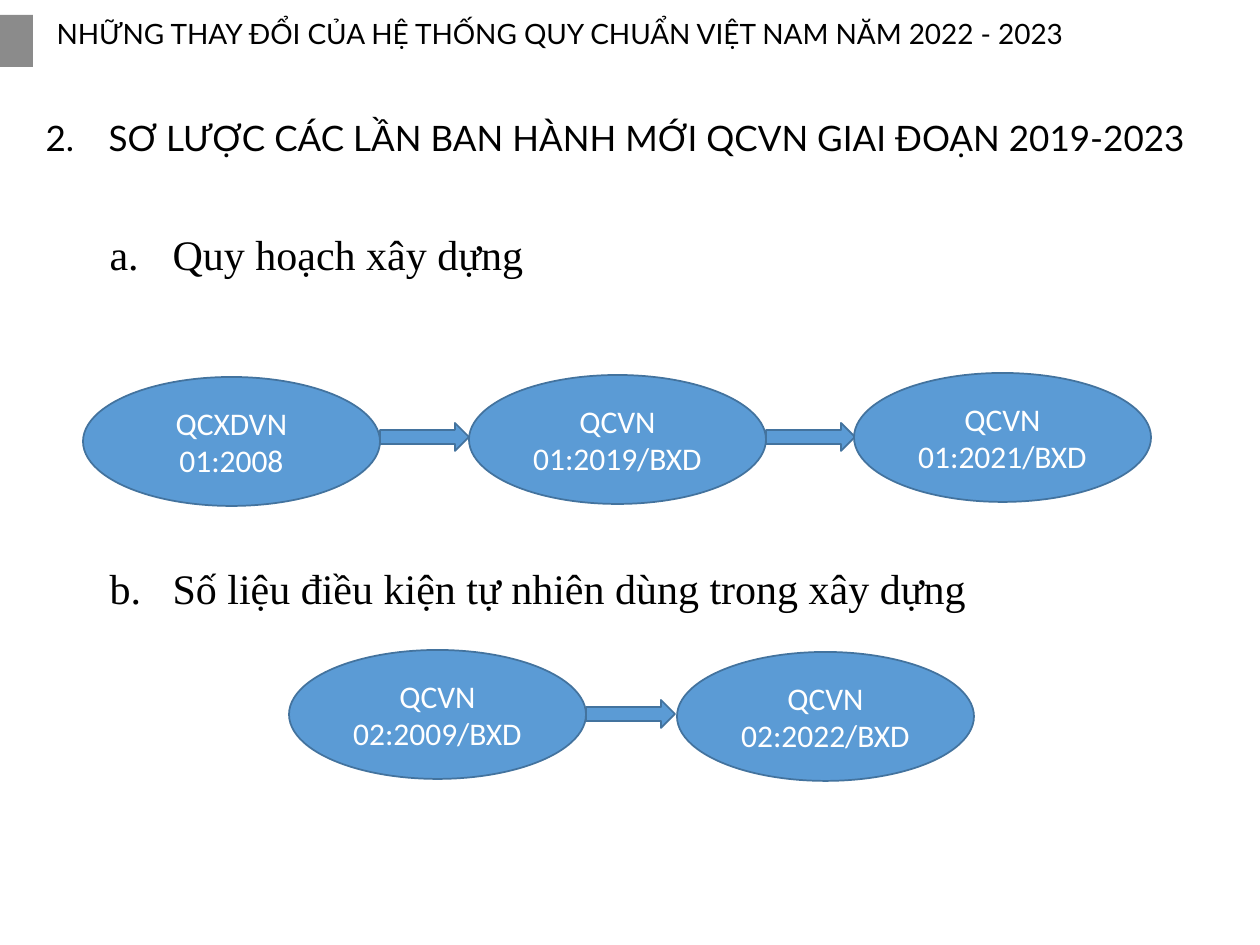
from lxml import etree
from pptx import Presentation
from pptx.dml.color import RGBColor
from pptx.enum.shapes import MSO_SHAPE
from pptx.enum.text import MSO_ANCHOR, MSO_AUTO_SIZE, PP_ALIGN
from pptx.oxml.ns import qn
from pptx.util import Inches, Pt

PX = 914400 / 126
BLACK = RGBColor(0x00, 0x00, 0x00)
WHITE = RGBColor(0xFF, 0xFF, 0xFF)
GRAY = RGBColor(0x80, 0x80, 0x80)
BLUE = RGBColor(0x5B, 0x9B, 0xD5)
EDGE = RGBColor(0x43, 0x73, 0x9E)
RECT, OVAL, ARROW = MSO_SHAPE.RECTANGLE, MSO_SHAPE.OVAL, MSO_SHAPE.RIGHT_ARROW
TOP, MIDDLE = MSO_ANCHOR.TOP, MSO_ANCHOR.MIDDLE
LEFT, CENTER = PP_ALIGN.LEFT, PP_ALIGN.CENTER
FIXED = MSO_AUTO_SIZE.NONE


def write(shape, text, size, face, color, align, anchor):
    """Put one formatted run in the shape and return its paragraph."""
    frame = shape.text_frame
    frame.word_wrap = True
    frame.auto_size = FIXED
    frame.vertical_anchor = anchor
    para = frame.paragraphs[0]
    para.alignment = align
    para.space_before = Pt(0)
    run = para.add_run()
    run.text = text
    run.font.size = Pt(size)
    run.font.name = face
    run.font.bold = False
    run.font.color.rgb = color
    return para


def draw(kind, x, y, w, h, fill):
    shape = slide.shapes.add_shape(
        kind, *(round(v * PX) for v in (x, y, w, h)))
    shape.shadow.inherit = False
    shape.fill.solid()
    shape.fill.fore_color.rgb = fill
    shape.line.color.rgb = EDGE
    shape.line.width = Pt(1)
    return shape


deck = Presentation()
deck.slide_width = round(1260 * PX)
deck.slide_height = round(945 * PX)
slide = deck.slides.add_slide(deck.slide_layouts.get_by_name("Comparison"))
holders = {p.placeholder_format.idx: p for p in slide.placeholders}

# Side mark
mark = draw(RECT, 0, 15, 33, 52, GRAY)
mark.line.fill.background()
tint = mark.fill._xPr.find(".//" + qn("a:srgbClr"))
etree.SubElement(tint, qn("a:alpha"), val="91000")

# Title and numbered headings: index, box, text, size, face, numbering, start
heads = [
    (0, (44, 14, 1126, 53),
     "NHỮNG THAY ĐỔI CỦA HỆ THỐNG QUY CHUẨN VIỆT NAM NĂM 2022 - 2023",
     16, "Lato", None, 1),
    (1, (33, 115, 1168, 44),
     "SƠ LƯỢC CÁC LẦN BAN HÀNH MỚI QCVN GIAI ĐOẠN 2019-2023",
     20, "Lato", "arabicPeriod", 2),
    (2, (97, 228, 951, 44), "Quy hoạch xây dựng",
     24, "Times New Roman", "alphaLcPeriod", 1),
    (3, (97, 562, 951, 44), "Số liệu điều kiện tự nhiên dùng trong xây dựng",
     24, "Times New Roman", "alphaLcPeriod", 2),
]
for idx, box, text, size, face, style, start in heads:
    head = holders[idx]
    head.left, head.top, head.width, head.height = (
        round(v * PX) for v in box)
    para = write(head, text, size, face, BLACK, LEFT, TOP)
    para.line_spacing = 0.9
    if style:
        props = para._p.get_or_add_pPr()
        props.set("marL", str(Inches(0.5)))
        props.set("indent", str(-Inches(0.5)))
        etree.SubElement(props, qn("a:buFont"), typeface="+mj-lt")
        etree.SubElement(props, qn("a:buAutoNum"), type=style,
                         startAt=str(start))
spare = holders[4]._element
spare.getparent().remove(spare)

# Chains of codes: arrow top, then left, top and text of each oval
WIDE, HIGH = 297, 129
chains = [
    (423, [(83, 377, "QCXDVN 01:2008"), (469, 375, "QCVN 01:2019/BXD"),
           (854, 373, "QCVN 01:2021/BXD")]),
    (700, [(289, 650, "QCVN 02:2009/BXD"), (677, 652, "QCVN 02:2022/BXD")]),
]
for level, codes in chains:
    for x, y, text in codes[:-1]:
        draw(ARROW, x + WIDE, level, 89, 28, BLUE)
    for x, y, text in codes:
        oval = draw(OVAL, x, y, WIDE, HIGH, BLUE)
        write(oval, text, 18, "Calibri", WHITE, CENTER, MIDDLE)

deck.save("out.pptx")
